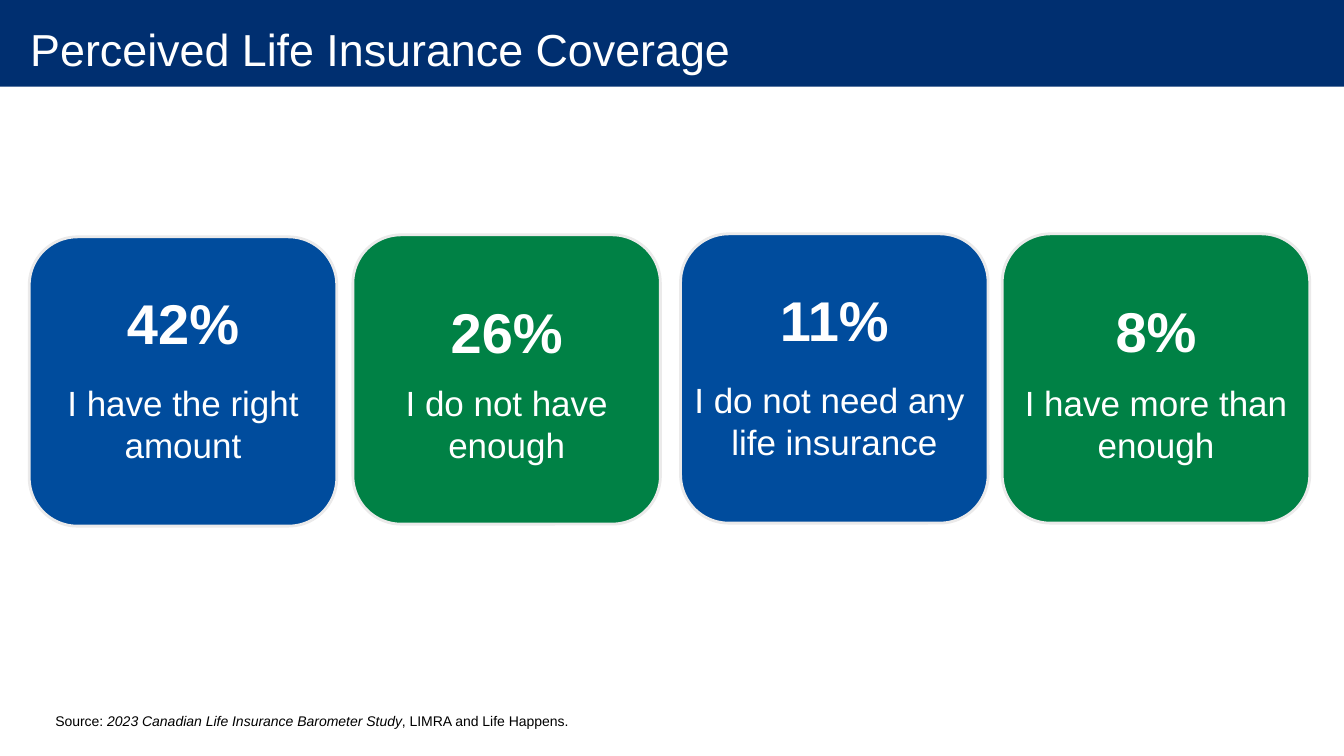
from pptx import Presentation
from pptx.dml.color import RGBColor
from pptx.enum.shapes import MSO_SHAPE
from pptx.enum.text import MSO_ANCHOR, MSO_AUTO_SIZE, PP_ALIGN
from pptx.util import Inches, Pt

COLORS = {
    "navy": "002F70",
    "blue": "004C9D",
    "green": "008145",
    "border": "EBEAEA",
    "white": "FFFFFF",
    "black": "000000",
}
FONT = "Arial"
GRID = Inches(0.1)
CARD_WIDTH, CARD_HEIGHT = 30.5, 28.7
ANSWERS = [
    ("42%", "I have the right amount", "blue", 2.9, 23.5, 28.1, 37.4),
    ("26%", "I do not have\venough", "green", 35, 23.3, 29, 37.4),
    ("11%", "I do not need any \nlife insurance", "blue", 67.5, 23.2, 27.8, 37.1),
    ("8%", "I have more than enough", "green", 99.4, 23.2, 28.9, 37.4),
]
SOURCE = [
    ("Source: ", False),
    ("2023 Canadian Life Insurance Barometer Study", True),
    (", LIMRA and Life Happens.", False),
]


def color(name):
    """Return the named palette colour."""
    return RGBColor.from_string(COLORS[name])


def cells(*counts):
    """Convert grid columns and rows to lengths."""
    return [round(count * GRID) for count in counts]


def style_runs(frame, size, ink, align, bold=False):
    """Format every paragraph and run of a text frame."""
    for paragraph in frame.paragraphs:
        paragraph.alignment = align
        for run in paragraph.runs:
            run.font.name = FONT
            run.font.size = Pt(size)
            run.font.bold = bold
            run.font.color.rgb = color(ink)


def add_panel(slide, preset, area, fill, border=None):
    """Draw a filled panel, with a border if one is named."""
    panel = slide.shapes.add_shape(preset, *cells(*area))
    panel.shadow.inherit = False
    panel.fill.solid()
    panel.fill.fore_color.rgb = color(fill)
    if border:
        panel.line.color.rgb = color(border)
        panel.line.width = Pt(2)
    else:
        panel.line.fill.background()
    return panel


def add_text(slide, area, text, size, ink="white", align=PP_ALIGN.CENTER, bold=False):
    """Add a wrapping text box and return its frame."""
    frame = slide.shapes.add_textbox(*cells(*area)).text_frame
    frame.word_wrap = True
    frame.auto_size = MSO_AUTO_SIZE.SHAPE_TO_FIT_TEXT
    frame.text = text
    style_runs(frame, size, ink, align, bold)
    return frame


def add_heading(slide, text):
    """Place the title over its full-width band."""
    title = slide.shapes.title
    title.left, title.top, title.width, title.height = cells(0, 0, 133.3, 9.7)
    band = add_panel(slide, MSO_SHAPE.RECTANGLE, (0, 0, 133.3, 8.6), "navy")
    title.element.addprevious(band.element)
    frame = title.text_frame
    frame.text = text
    frame.word_wrap = False
    frame.auto_size = MSO_AUTO_SIZE.NONE
    frame.vertical_anchor = MSO_ANCHOR.MIDDLE
    frame.margin_left, frame.margin_right = cells(3, 2)
    frame.margin_top = frame.margin_bottom = 0
    style_runs(frame, 32, "white", PP_ALIGN.LEFT)


def add_card(slide, share, answer, fill, left, top, share_top, answer_top):
    """Draw one answer card with its share and wording centred on it."""
    center = left + CARD_WIDTH / 2
    add_panel(slide, MSO_SHAPE.ROUNDED_RECTANGLE,
              (left, top, CARD_WIDTH, CARD_HEIGHT), fill, "border")
    add_text(slide, (center - 11.7, share_top, 23.4, 7.7), share, 40, bold=True)
    add_text(slide, (center - 18.7, answer_top, 37.4, 9.4), answer, 25)


def add_source(slide):
    """Add the source line with the study name in italics."""
    frame = add_text(slide, (4.5, 70.2, 74.4, 2.7), "", 10)
    for part, italic in SOURCE:
        run = frame.paragraphs[0].add_run()
        run.text = part
        run.font.italic = italic
    style_runs(frame, 10, "black", PP_ALIGN.LEFT)


def main():
    """Build and save the slide."""
    deck = Presentation()
    deck.slide_width, deck.slide_height = cells(133.3, 75)
    slide = deck.slides.add_slide(deck.slide_layouts.get_by_name("Title Only"))
    add_heading(slide, "Perceived Life Insurance Coverage")
    for answer in ANSWERS:
        add_card(slide, *answer)
    add_source(slide)
    deck.save("out.pptx")


if __name__ == "__main__":
    main()
